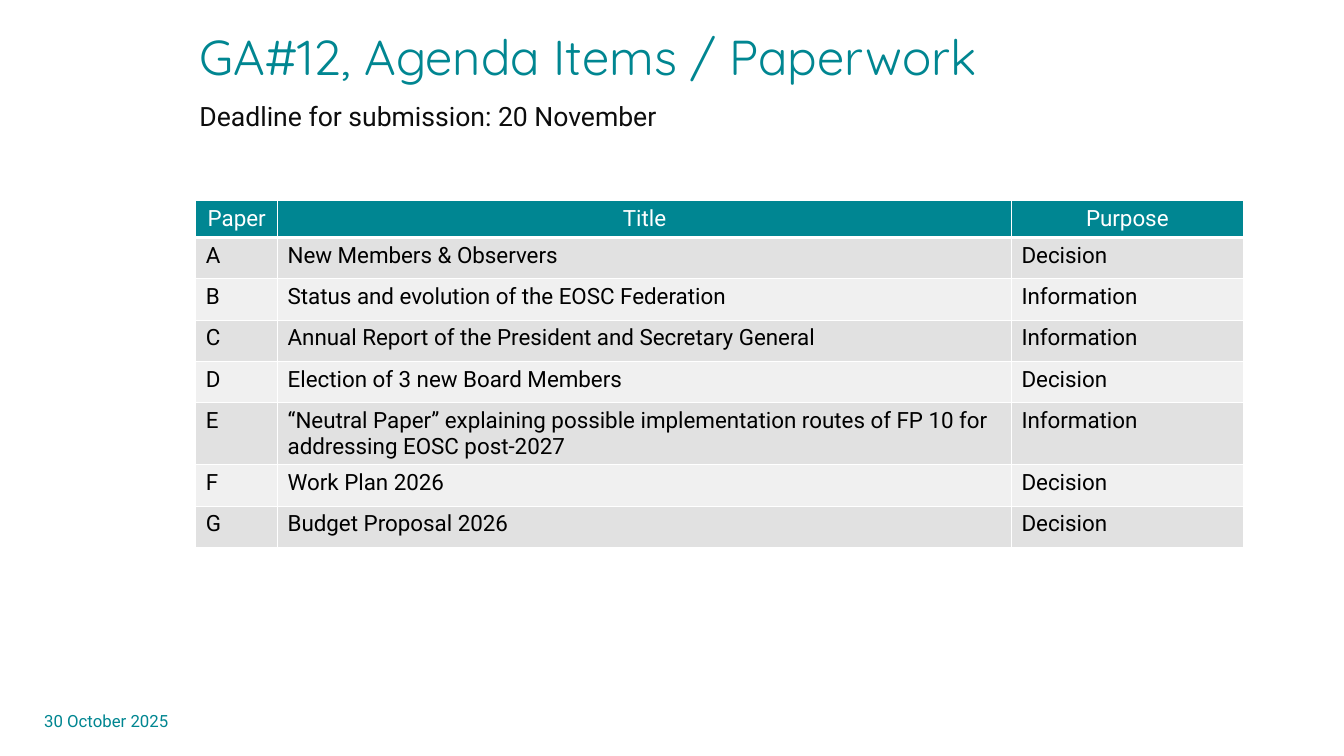
from lxml import etree
from pptx import Presentation
from pptx import util as u
from pptx.dml.color import RGBColor
from pptx.enum import text
from pptx.oxml import ns

COLORS = {"teal": "008691", "header": "008692", "white": "FFFFFF", "black": "000000",
          "ink": "0D0D0D", "odd": "E1E1E1", "even": "F0F0F0"}
HEADINGS = ("Paper", "Title", "Purpose")
PAPERS = [
    ("A", "New Members & Observers", "Decision"),
    ("B", "Status and evolution of the EOSC Federation", "Information"),
    ("C", "Annual Report of the President and Secretary General", "Information"),
    ("D", "Election of 3 new Board Members", "Decision"),
    ("E", "“Neutral Paper” explaining possible implementation routes of FP 10 "
          "for addressing EOSC post-2027", "Information"),
    ("F", "Work Plan 2026", "Decision"),
    ("G", "Budget Proposal 2026", "Decision"),
]
COLUMN_WIDTHS = (58.4, 524.2, 165.6)
HEADER_HEIGHT, ROW_HEIGHT = 26.4, 29.5


def color(name):
    return RGBColor.from_string(COLORS[name])


def write(para, words, size, ink, font="Roboto", **layout):
    span = para.add_run()
    span.text = words
    for name, value in {"name": font, "size": u.Pt(size), "bold": False}.items():
        setattr(span.font, name, value)
    span.font.color.rgb = color(ink)
    for name, value in layout.items():
        setattr(para, name, value)


def add_label(page, box, words, size, ink, anchor, **style):
    frame = page.shapes.add_textbox(*map(u.Pt, box)).text_frame
    for name, value in {"word_wrap": True, "vertical_anchor": anchor}.items():
        setattr(frame, name, value)
    write(frame.paragraphs[0], words, size, ink, **style)


def set_borders(cell, widths):
    props = cell._tc.get_or_add_tcPr()
    for index, (side, width) in enumerate(widths.items()):
        line = etree.Element(ns.qn("a:" + side), w=str(u.Pt(width)))
        fill = etree.SubElement(line, ns.qn("a:solidFill"))
        etree.SubElement(fill, ns.qn("a:srgbClr"), val=COLORS["white"])
        props.insert(index, line)


def add_heading(page, left, top, width):
    middle, upper = text.MSO_ANCHOR.MIDDLE, text.MSO_ANCHOR.TOP
    add_label(page, (left, top, width, 47.5), "GA#12, Agenda Items / Paperwork",
              35, "teal", middle, font="Quicksand", line_spacing=0.9)
    add_label(page, (left, top + 51.8, width, 28.8), "Deadline for submission: 20 November",
              19, "ink", upper, line_spacing=0.9)


def add_agenda(page, left, top):
    rows = [HEADINGS] + PAPERS
    height = HEADER_HEIGHT + ROW_HEIGHT * len(PAPERS)
    box = (left, top, sum(COLUMN_WIDTHS), height)
    table = page.shapes.add_table(len(rows), len(HEADINGS), *map(u.Pt, box)).table
    for column, width in zip(table.columns, COLUMN_WIDTHS):
        column.width = u.Pt(width)
    for r, words in enumerate(rows):
        header = r == 0
        table.rows[r].height = u.Pt(HEADER_HEIGHT if header else ROW_HEIGHT)
        shade = "header" if header else "odd" if r % 2 else "even"
        for c, word in enumerate(words):
            cell = table.cell(r, c)
            cell.fill.solid()
            cell.fill.fore_color.rgb = color(shade)
            set_borders(cell, {"lnL": 1, "lnR": 1, "lnT": 1, "lnB": 3 if header else 1})
            write(cell.text_frame.paragraphs[0], word, 16, "white" if header else "black",
                  alignment=text.PP_ALIGN.CENTER if header else text.PP_ALIGN.LEFT)


def add_date(page, left, top):
    add_label(page, (left, top, 324, 28.8), "30 October 2025", 12, "teal",
              text.MSO_ANCHOR.MIDDLE)


def main():
    deck = Presentation()
    deck.slide_width, deck.slide_height = u.Pt(960), u.Pt(540)
    page = deck.slides.add_slide(deck.slide_layouts[6])
    # Agenda table
    add_agenda(page, 139.9, 143.3)
    # Title and deadline
    add_heading(page, 135.4, 18.7, 774)
    # Footer date
    add_date(page, 24.5, 500.4)
    deck.save("out.pptx")


if __name__ == "__main__":
    main()
